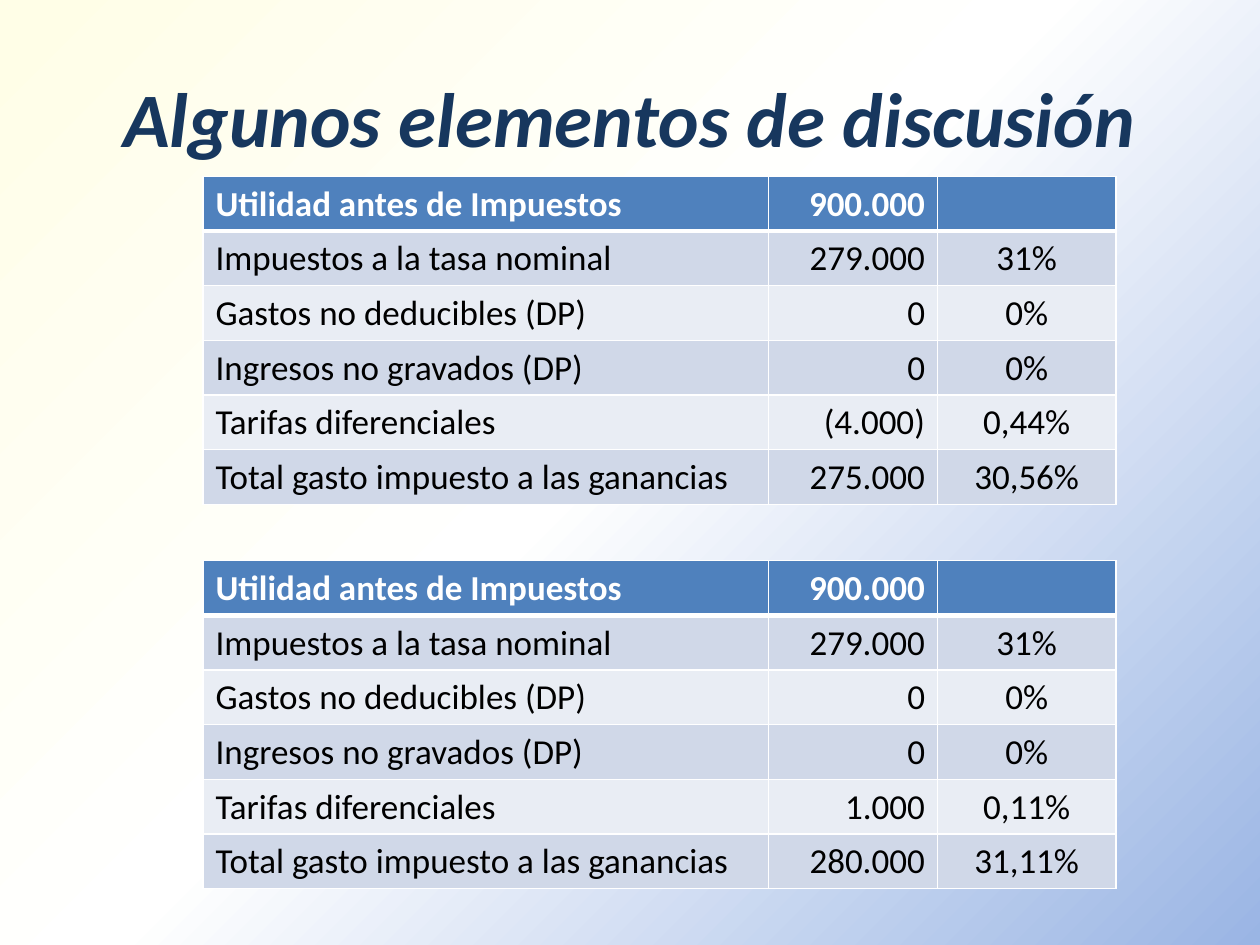
from lxml.etree import SubElement
from pptx import Presentation
from pptx.dml.color import RGBColor
from pptx.enum.text import MSO_ANCHOR, PP_ALIGN
from pptx.oxml.ns import qn
from pptx.util import Pt

FONT = "Calibri"
COLORS = {
    "title": "17375E",
    "header": "4F81BD",
    "band_dark": "D0D8E8",
    "band_light": "E9EDF4",
    "white": "FFFFFF",
    "black": "000000",
    "cream": "FFFEE7",
    "sky": "9AB5E4",
}
BACKGROUND_STOPS = [(1, "cream"), (48, "white"), (100, "sky")]

TABLE_LEFT = 116
COLUMN_WIDTHS = [323.3, 96.5, 101.9]
COLUMN_ALIGNMENTS = [PP_ALIGN.LEFT, PP_ALIGN.RIGHT, PP_ALIGN.CENTER]
ROW_HEIGHT = 31.2

COMMON_ROWS = [
    ("Utilidad antes de Impuestos", "900.000", ""),
    ("Impuestos a la tasa nominal", "279.000", "31%"),
    ("Gastos no deducibles (DP)", "0", "0%"),
    ("Ingresos no gravados (DP)", "0", "0%"),
]
LAST_LABELS = ("Tarifas diferenciales", "Total gasto impuesto a las ganancias")
# Top of each table and the values of its last two rows
SCENARIOS = [
    (320.4, [("1.000", "0,11%"), ("280.000", "31,11%")]),
    (100.8, [("(4.000)", "0,44%"), ("275.000", "30,56%")]),
]


def color(name):
    return RGBColor.from_string(COLORS[name])


def format_font(font, size, color_name, bold, italic=False):
    font.name = FONT
    font.size = Pt(size)
    font.bold = bold
    font.italic = italic
    font.color.rgb = color(color_name)


def paint_background(page):
    fill = page.background.fill
    fill.gradient()
    fill.gradient_angle = 315
    stops = page.element.find(".//" + qn("a:gsLst"))
    for stop in list(stops):
        stops.remove(stop)
    for percent, name in BACKGROUND_STOPS:
        stop = SubElement(stops, qn("a:gs"), pos=str(percent * 1000))
        SubElement(stop, qn("a:srgbClr"), val=COLORS[name])


def add_title(page, text):
    box = page.shapes.add_textbox(Pt(36), Pt(21.6), Pt(648), Pt(90))
    frame = box.text_frame
    frame.word_wrap = True
    frame.vertical_anchor = MSO_ANCHOR.MIDDLE
    frame.text = text
    para = frame.paragraphs[0]
    para.alignment = PP_ALIGN.CENTER
    format_font(para.runs[0].font, 44, "title", bold=True, italic=True)


def set_borders(cell, top, bottom):
    properties = cell._tc.get_or_add_tcPr()
    for tag, width in (("lnL", 1), ("lnR", 1), ("lnT", top), ("lnB", bottom)):
        line = SubElement(properties, qn("a:" + tag), w=str(Pt(width)))
        solid = SubElement(line, qn("a:solidFill"))
        SubElement(solid, qn("a:srgbClr"), val=COLORS["white"])


def format_cell(cell, text, row, alignment):
    is_header = row == 0
    # Borders come before the fill; a thick rule runs below the header
    set_borders(cell, top=3 if row == 1 else 1, bottom=3 if is_header else 1)
    band = "band_dark" if row % 2 else "band_light"
    cell.fill.solid()
    cell.fill.fore_color.rgb = color("header" if is_header else band)
    cell.text_frame.text = text
    para = cell.text_frame.paragraphs[0]
    para.alignment = alignment
    for span in para.runs:
        format_font(span.font, 20, "white" if is_header else "black", is_header)


def add_tax_table(page, top, rows):
    frame = page.shapes.add_table(
        len(rows), len(COLUMN_WIDTHS), Pt(TABLE_LEFT), Pt(top),
        Pt(sum(COLUMN_WIDTHS)), Pt(ROW_HEIGHT * len(rows)))
    table = frame.table
    table.horz_banding = False
    for column, width in zip(table.columns, COLUMN_WIDTHS):
        column.width = Pt(width)
    for row, texts in enumerate(rows):
        table.rows[row].height = Pt(ROW_HEIGHT)
        for column, text in enumerate(texts):
            format_cell(table.cell(row, column), text, row,
                        COLUMN_ALIGNMENTS[column])


def main():
    deck = Presentation()
    deck.slide_width, deck.slide_height = Pt(720), Pt(540)
    page = deck.slides.add_slide(deck.slide_layouts[6])

    # Background and title
    paint_background(page)
    add_title(page, "Algunos elementos de discusión")

    # One table for each scenario
    for top, values in SCENARIOS:
        last_rows = [(label, *pair) for label, pair in zip(LAST_LABELS, values)]
        add_tax_table(page, top, COMMON_ROWS + last_rows)

    deck.save("out.pptx")


if __name__ == "__main__":
    main()
